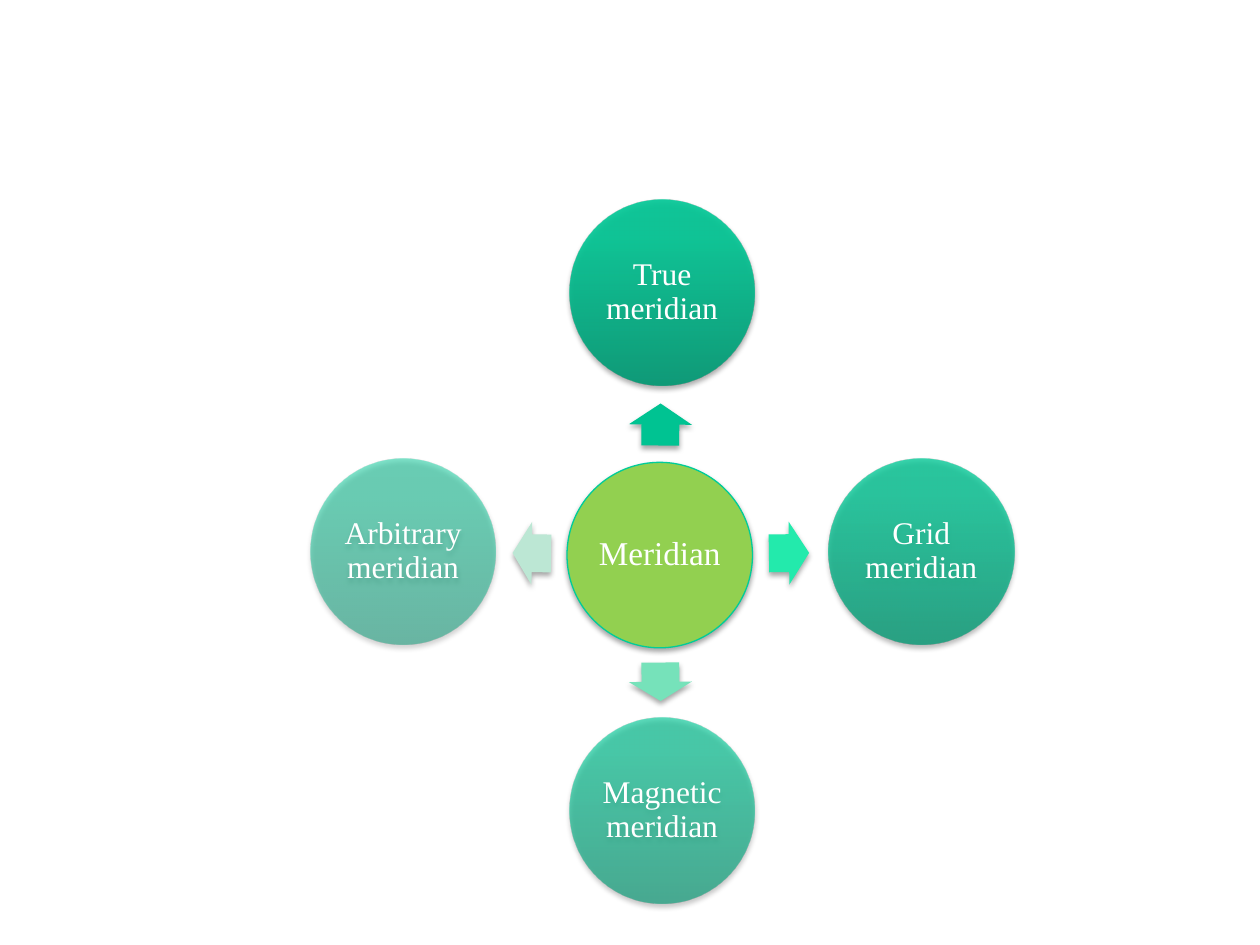
import math

import pptx
import pptx.dml.color
import pptx.enum.shapes
import pptx.enum.text
import pptx.oxml
import pptx.oxml.ns
import pptx.util

Pt = pptx.util.Pt
RGBColor = pptx.dml.color.RGBColor
MSO_SHAPE = pptx.enum.shapes.MSO_SHAPE

WHITE = RGBColor(0xFF, 0xFF, 0xFF)
HUB_FILL = RGBColor(0x92, 0xD0, 0x50)
HUB_LINE = RGBColor(0x00, 0xCC, 0x99)
GRADIENT = [
    (0, RGBColor(0x00, 0x98, 0x72)),
    (80, RGBColor(0x00, 0xC6, 0x94)),
    (100, RGBColor(0x00, 0xC7, 0x95)),
]

FONT = "Times New Roman"
DIAMETER = 106
HUB_CENTER = (377, 317.2)
RING_CENTER, RING_RADIUS = (378.4, 315.3), 148
ARROW_CENTER, ARROW_RADIUS = (377.4, 316.1), 73.5
ARROW_WIDTH = 36

# label, direction, circle opacity in %, arrow colour, arrow length, arrow rotation
MERIDIANS = [
    ("True meridian", 270, 90, RGBColor(0x00, 0xC3, 0x92), 24, 270.5),
    ("Grid meridian", 0, 77, RGBColor(0x23, 0xEA, 0xAC), 23, 359.3),
    ("Magnetic meridian", 90, 63, RGBColor(0x76, 0xE2, 0xBA), 22, 89.5),
    ("Arbitrary meridian", 180, 50, RGBColor(0xBC, 0xE7, 0xD4), 22, 180.7),
]


def around(center, radius, degrees):
    """Return the point at a clockwise angle from the right of center."""
    angle = math.radians(degrees)
    return center[0] + radius * math.cos(angle), center[1] + radius * math.sin(angle)


def add_centered(slide, kind, center, width, height):
    sp = slide.shapes.add_shape(
        kind, Pt(center[0] - width / 2), Pt(center[1] - height / 2), Pt(width), Pt(height))
    sp.line.fill.background()
    add_shadow(sp)
    return sp


def add_shadow(sp):
    sp.shadow.inherit = False
    effects = sp._element.spPr.find(pptx.oxml.ns.qn("a:effectLst"))
    effects.append(pptx.oxml.parse_xml(
        f'<a:outerShdw {pptx.oxml.ns.nsdecls("a")} blurRad="{Pt(3.1)}" dist="{Pt(1.8)}" '
        'dir="5400000" rotWithShape="0"><a:srgbClr val="000000">'
        '<a:alpha val="35000"/></a:srgbClr></a:outerShdw>'))


def set_gradient(sp, opacity):
    sp.fill.gradient()
    sp.fill.gradient_angle = 90
    stops = sp._element.spPr.find(".//" + pptx.oxml.ns.qn("a:gsLst"))
    for stop in list(stops):
        stops.remove(stop)
    for position, color in GRADIENT:
        stops.append(pptx.oxml.parse_xml(
            f'<a:gs {pptx.oxml.ns.nsdecls("a")} pos="{position * 1000}">'
            f'<a:srgbClr val="{color}"><a:alpha val="{opacity * 1000}"/></a:srgbClr></a:gs>'))


def add_circle(slide, center, label, size):
    sp = add_centered(slide, MSO_SHAPE.OVAL, center, DIAMETER, DIAMETER)
    tf = sp.text_frame
    tf.word_wrap = True
    tf.vertical_anchor = pptx.enum.text.MSO_ANCHOR.MIDDLE
    tf.margin_left = tf.margin_right = tf.margin_top = tf.margin_bottom = Pt(2)
    p = tf.paragraphs[0]
    p.text = label
    p.alignment = pptx.enum.text.PP_ALIGN.CENTER
    p.line_spacing = 0.9
    p.font.name = FONT
    p.font.size = Pt(size)
    p.font.color.rgb = WHITE
    return sp


def add_arrow(slide, center, length, rotation, color):
    sp = add_centered(slide, MSO_SHAPE.RIGHT_ARROW, center, length, ARROW_WIDTH)
    sp.adjustments[0] = 0.6
    sp.adjustments[1] = 0.5
    sp.rotation = rotation
    sp.fill.solid()
    sp.fill.fore_color.rgb = color


def main():
    prs = pptx.Presentation()
    prs.slide_width, prs.slide_height = Pt(720), Pt(540)
    slide = prs.slides.add_slide(prs.slide_layouts[6])

    hub = add_circle(slide, HUB_CENTER, "Meridian", 19)
    hub.fill.solid()
    hub.fill.fore_color.rgb = HUB_FILL
    hub.line.color.rgb = HUB_LINE
    hub.line.width = Pt(0.75)

    for label, direction, opacity, color, length, rotation in MERIDIANS:
        add_arrow(slide, around(ARROW_CENTER, ARROW_RADIUS, direction), length, rotation, color)
        circle = add_circle(slide, around(RING_CENTER, RING_RADIUS, direction), label, 18)
        set_gradient(circle, opacity)

    prs.save("out.pptx")


if __name__ == "__main__":
    main()
